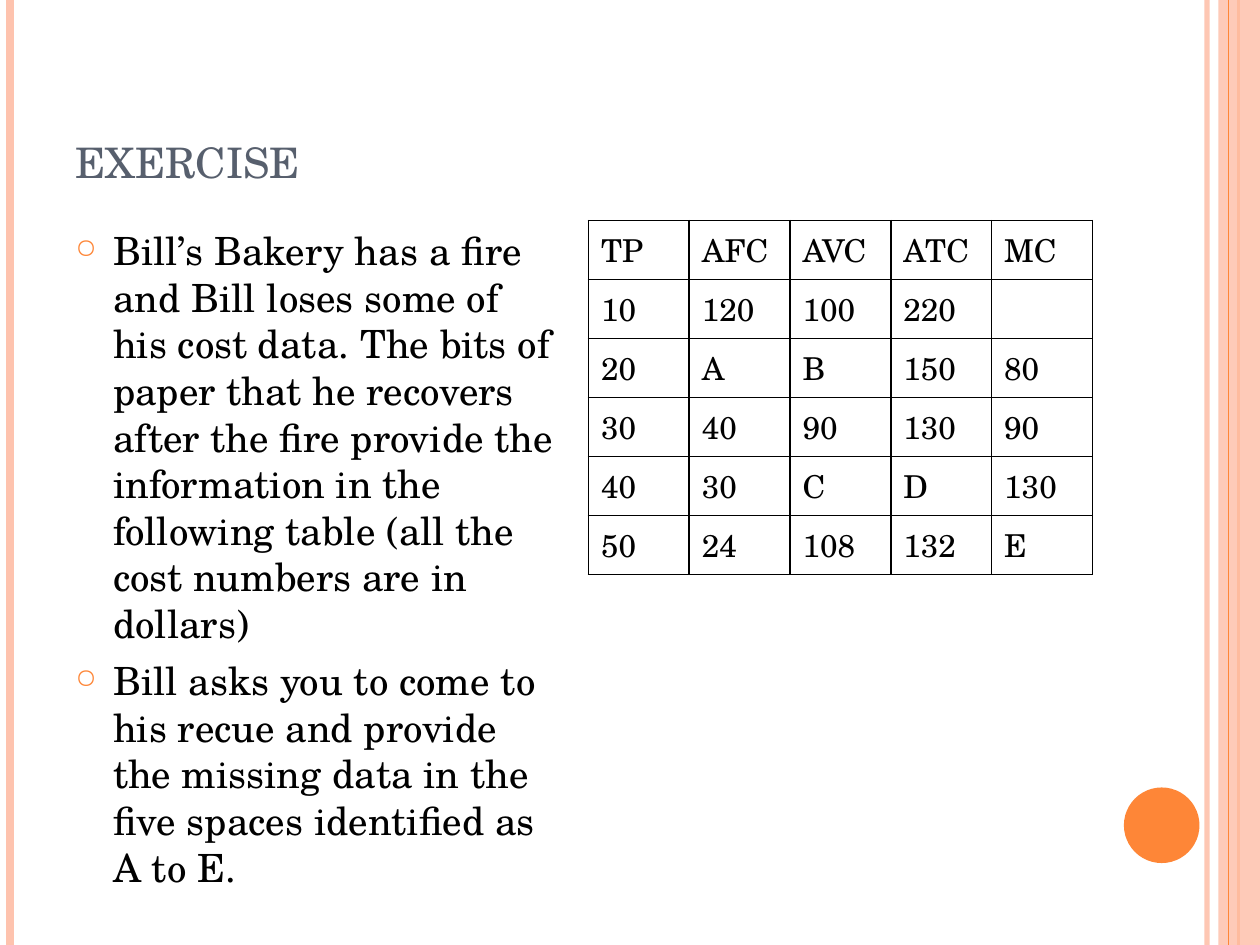
from pptx import Presentation
from pptx.dml.color import RGBColor
from pptx.enum.shapes import MSO_CONNECTOR, MSO_SHAPE
from pptx.enum.text import MSO_ANCHOR
from pptx.oxml.ns import qn
from pptx.util import Inches, Pt
from lxml.etree import SubElement

FONT = "TeX Gyre Schola"
COLORS = {"orange": "FE8637", "peach": "FEC3AE", "title": "575F6D",
          "text": "000000"}
BULLETS = [
    "Bill’s Bakery has a fire and Bill loses some of his cost data. The bits "
    "of paper that he recovers after the fire provide the information in the "
    "following table (all the cost numbers are in dollars)",
    "Bill asks you to come to his recue and provide the missing data in the "
    "five spaces identified as A to E.",
]
COSTS = [
    ["TP", "AFC", "AVC", "ATC", "MC"],
    ["10", "120", "100", "220", ""],
    ["20", "A", "B", "150", "80"],
    ["30", "40", "90", "130", "90"],
    ["40", "30", "C", "D", "130"],
    ["50", "24", "108", "132", "E"],
]


def rgb(name):
    return RGBColor.from_string(COLORS[name])


def style_text(p, size, color):
    for r in p.runs:
        r.font.name, r.font.size = FONT, Pt(size)
        r.font.color.rgb = rgb(color)


def set_alpha(fill_parent, percent):
    clr = next(fill_parent.iter(qn("a:srgbClr")))
    SubElement(clr, qn("a:alpha"), val=str(percent * 1000))


def add_stripe(s, x, top, height, color, width, alpha=None):
    line = s.shapes.add_connector(MSO_CONNECTOR.STRAIGHT, Inches(x), Inches(top),
                                  Inches(x), Inches(top + height))
    line.line.color.rgb = rgb(color)
    line.line.width = Pt(width)
    if alpha:
        set_alpha(line.line._ln, alpha)
    SubElement(line._element.spPr, qn("a:effectLst"))


def add_block(s, kind, box, color, alpha=None):
    sp = s.shapes.add_shape(kind, *map(Inches, box))
    sp.shadow.inherit = False
    sp.fill.solid()
    sp.fill.fore_color.rgb = rgb(color)
    sp.line.fill.background()
    if alpha:
        set_alpha(sp._element.spPr, alpha)


def add_frame(s, left, top, width, height):
    """Vertical stripes at both edges, the right-hand band and the disc."""
    right = left + width
    add_stripe(s, right - 0.42, top, height, "peach", 3, 93)
    add_stripe(s, left + 0.08, top, height, "peach", 4.5)
    add_stripe(s, right - 0.17, top, height, "orange", 1.5)
    add_block(s, MSO_SHAPE.RECTANGLE, (right - 0.33, top, 0.33, height), "peach", 87)
    add_stripe(s, right - 0.25, top, height, "orange", 0.75)
    add_block(s, MSO_SHAPE.OVAL, (right - 1.08, top + height - 1.25, 0.6, 0.6),
              "orange")


def add_text_frame(s, box):
    tf = s.shapes.add_textbox(*map(Inches, box)).text_frame
    tf.word_wrap = True
    return tf


def add_title(s, box, text):
    tf = add_text_frame(s, box)
    tf.vertical_anchor = MSO_ANCHOR.BOTTOM
    tf.text = text
    p = tf.paragraphs[0]
    style_text(p, 30, "title")
    p.runs[0].font._element.set("cap", "small")


def add_bullets(s, box, items):
    tf = add_text_frame(s, box)
    tf.text = "\n".join(items)
    for p in tf.paragraphs:
        style_text(p, 22.2, "text")
        p.space_before = Pt(6)
        pPr = p._p.get_or_add_pPr()
        pPr.set("marL", str(Inches(0.3)))
        pPr.set("indent", str(Inches(-0.3)))
        color = SubElement(pPr, qn("a:buClr"))
        SubElement(color, qn("a:srgbClr"), val=COLORS["orange"])
        SubElement(pPr, qn("a:buSzPct"), val="70000")
        SubElement(pPr, qn("a:buChar"), char="○")


def add_borders(cell):
    tcPr = cell._tc.get_or_add_tcPr()
    for i, side in enumerate(("lnL", "lnR", "lnT", "lnB")):
        ln = SubElement(tcPr, qn(f"a:{side}"), w=str(Pt(1)))
        fill = SubElement(ln, qn("a:solidFill"))
        SubElement(fill, qn("a:srgbClr"), val=COLORS["text"])
        tcPr.insert(i, ln)  # borders come before the fill


def add_cost_table(s, box, data):
    left, top, width, height = map(Inches, box)
    table = s.shapes.add_table(len(data), len(data[0]), left, top,
                               width, height).table
    table.first_row = table.horz_banding = False
    for i, row in enumerate(data):
        for j, value in enumerate(row):
            cell = table.cell(i, j)
            cell.text = value
            cell.vertical_anchor = MSO_ANCHOR.MIDDLE
            cell.fill.background()
            style_text(cell.text_frame.paragraphs[0], 18, "text")
            add_borders(cell)


def main():
    prs = Presentation()
    prs.slide_width, prs.slide_height = Inches(10), Inches(7.5)
    s = prs.slides.add_slide(prs.slide_layouts[6])
    add_frame(s, 0, 0, 10, 7.5)
    add_title(s, (0.5, 0.3, 8.17, 1.25), "exercise")
    add_bullets(s, (0.5, 1.75, 4, 5), BULLETS)
    add_cost_table(s, (4.67, 1.75, 4, 2.81), COSTS)
    prs.save("out.pptx")


if __name__ == "__main__":
    main()
